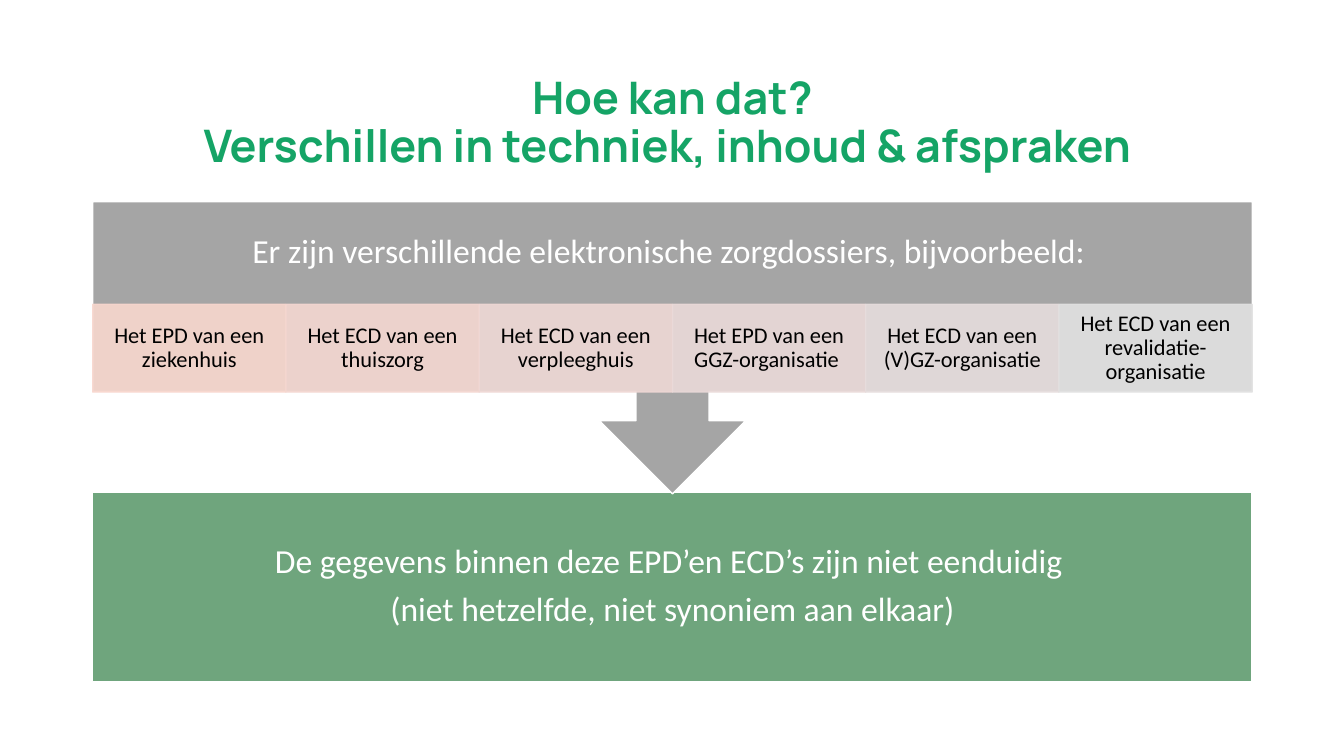
from lxml import etree
from pptx import Presentation
from pptx.dml.color import RGBColor
from pptx.enum.shapes import MSO_SHAPE
from pptx.enum.text import MSO_ANCHOR, PP_ALIGN
from pptx.oxml.ns import qn
from pptx.util import Inches, Pt

GREEN = RGBColor(0x15, 0xA4, 0x66)
SAGE = RGBColor(0x6F, 0xA5, 0x7D)
GREY = RGBColor(0xA5, 0xA5, 0xA5)
WHITE = RGBColor(0xFF, 0xFF, 0xFF)
BLACK = RGBColor(0x00, 0x00, 0x00)

LEFT, WIDTH = 0.92, 11.5
RECORDS = [
    ("Het EPD van een ziekenhuis", RGBColor(0xF8, 0xD7, 0xCE)),
    ("Het ECD van een thuiszorg", RGBColor(0xF4, 0xD7, 0xD1)),
    ("Het ECD van een verpleeghuis", RGBColor(0xEF, 0xD8, 0xD5)),
    ("Het EPD van een GGZ-organisatie ", RGBColor(0xEA, 0xDA, 0xD9)),
    ("Het ECD van een (V)GZ-organisatie", RGBColor(0xE6, 0xDD, 0xDD)),
    ("Het ECD van een revalidatie-organisatie", RGBColor(0xE1, 0xE1, 0xE1)),
]


def write(shape, text, size, color, insets, font="Calibri", bold=False):
    """Fill a shape with centred text; insets are left, top, right, bottom."""
    frame = shape.text_frame
    frame.word_wrap = True
    frame.vertical_anchor = MSO_ANCHOR.MIDDLE
    (frame.margin_left, frame.margin_top,
     frame.margin_right, frame.margin_bottom) = map(Inches, insets)
    frame.text = text
    for para in frame.paragraphs:
        para.alignment = PP_ALIGN.CENTER
        para.line_spacing = 0.9
        para.space_after = Pt(0.35 * size)
        para.font.name = font
        para.font.size = Pt(size)
        para.font.bold = bold
        para.font.color.rgb = color


def add_block(slide, kind, box, fill, line):
    shape = slide.shapes.add_shape(kind, *map(Inches, box))
    shape.shadow.inherit = False
    shape.fill.solid()
    shape.fill.fore_color.rgb = fill
    shape.line.color.rgb = line
    shape.line.width = Pt(1)
    return shape


def fade(shape, percent):
    """Set the opacity of both fill and line."""
    for color in shape.fill._xPr.iter(qn("a:srgbClr")):
        etree.SubElement(color, qn("a:alpha"), val=str(percent * 1000))


def add_title(slide, text):
    box = slide.shapes.add_textbox(*map(Inches, (LEFT, 0.61, WIDTH, 1.24)))
    write(box, text, 32, GREEN, (0.1, 0.05, 0.1, 0.05), "Manrope", True)
    box.text_frame.paragraphs[0].space_after = Pt(0)


def add_cards(slide, top, height):
    step = WIDTH / len(RECORDS)
    for i, (text, color) in enumerate(RECORDS):
        box = (LEFT + i * step, top, step, height)
        card = add_block(slide, MSO_SHAPE.RECTANGLE, box, color, color)
        fade(card, 90)
        write(card, text, 16, BLACK, (0.12, 0.02, 0.12, 0.02))


def main():
    deck = Presentation()
    deck.slide_width, deck.slide_height = Inches(13.33), Inches(7.5)
    slide = deck.slides.add_slide(deck.slide_layouts[6])

    add_title(slide, "Hoe kan dat?\vVerschillen in techniek, inhoud & afspraken ")

    # Conclusion
    result = add_block(slide, MSO_SHAPE.RECTANGLE,
                       (LEFT, 4.88, WIDTH, 1.88), SAGE, WHITE)
    write(result, "De gegevens binnen deze EPD’en ECD’s zijn niet eenduidig \n"
          "(niet hetzelfde, niet synoniem aan elkaar)", 24, WHITE, (0.19,) * 4)

    # Heading with arrow; its lower inset leaves room for the cards
    head = add_block(slide, MSO_SHAPE.DOWN_ARROW_CALLOUT,
                     (LEFT, 2, WIDTH, 2.9), GREY, WHITE)
    write(head, "Er zijn verschillende elektronische zorgdossiers, bijvoorbeeld: ",
          24, WHITE, (0.19, 0.19, 0.19, 1.06))

    # Kinds of records
    add_cards(slide, 3.02, 0.87)
    deck.save("out.pptx")


if __name__ == "__main__":
    main()
